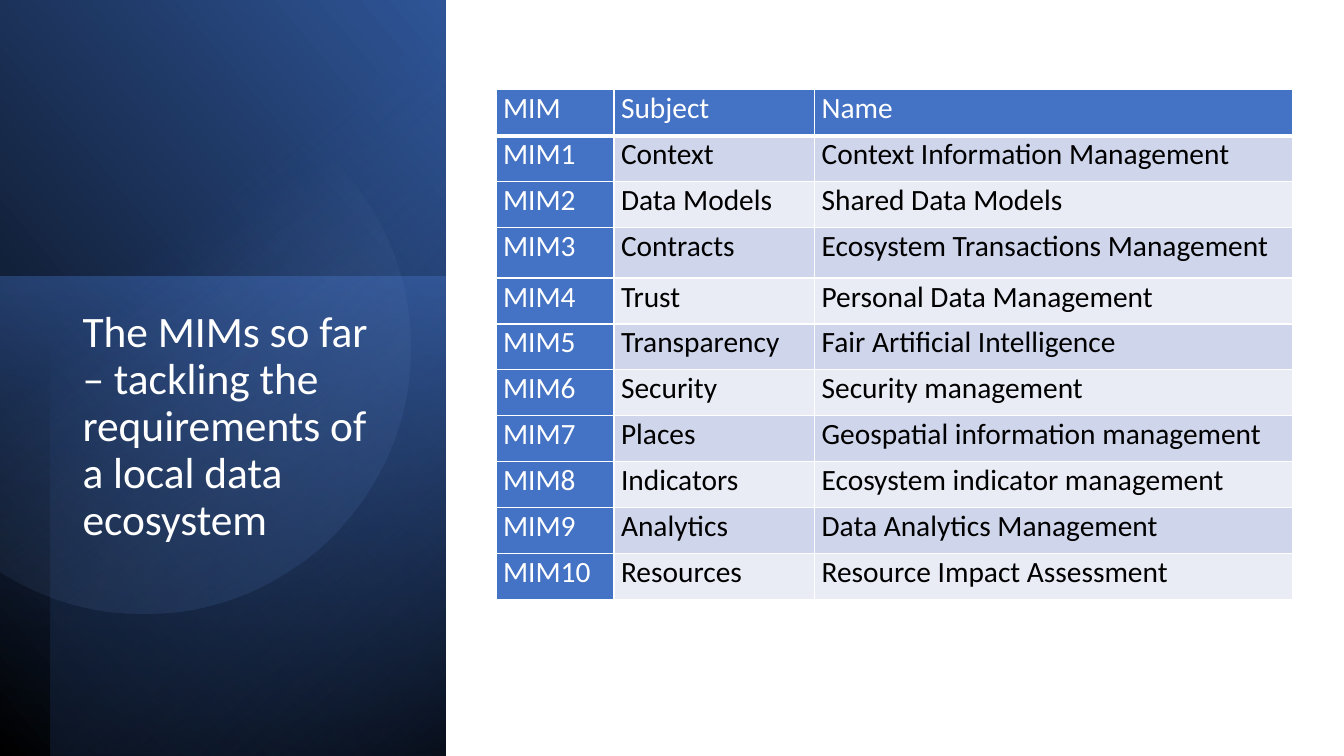
import math

import pptx
import pptx.dml.color
import pptx.enum.shapes
import pptx.oxml
import pptx.oxml.ns
import pptx.util

Inches = pptx.util.Inches
Pt = pptx.util.Pt

TITLE = "The MIMs so far – tackling the requirements of a local data ecosystem"
TABLE_ROWS = [
    ("MIM", "Subject", "Name"),
    ("MIM1", "Context", "Context Information Management"),
    ("MIM2", "Data Models", "Shared Data Models"),
    ("MIM3", "Contracts", "Ecosystem Transactions Management"),
    ("MIM4", "Trust", "Personal Data Management"),
    ("MIM5", "Transparency", "Fair Artificial Intelligence"),
    ("MIM6", "Security", "Security management"),
    ("MIM7", "Places", "Geospatial information management"),
    ("MIM8", "Indicators", "Ecosystem indicator management"),
    ("MIM9", "Analytics", "Data Analytics Management"),
    ("MIM10", "Resources", "Resource Impact Assessment"),
]

THEME = {
    "font": "Calibri", "title_size": 31, "table_size": 21,
    "white": "FFFFFF", "black": "000000", "accent": "4472C4",
    "deep": "2F5597", "navy": "203864", "pale": "8FAADC",
    "odd_row": "CFD5EA", "even_row": "E9EBF5",
}

# box, rotation, mirrored, gradient stops (position, colour, opacity), angle
PANELS = [
    ((-1.55, 1.55, 7.52, 4.42), 90, True,
     [(0, "black", 100), (100, "deep", 100)], 310),
    ((-0.17, 2.91, 4.76, 4.42), 270, False,
     [(0, "accent", 50), (100, "navy", 0)], 190),
    ((-1.29, 1.79, 7.5, 3.92), 270, True,
     [(0, "black", 59), (69, "accent", 0)], 220),
]
DISC_CENTRE, DISC_RADIUS = (1.43, 3.45), 2.64
DISC_STOPS, DISC_ANGLE = [(39, "pale", 0), (100, "deep", 26)], 52

TITLE_BOX = (0.72, 3.03, 3.15, 3.36)
TABLE_LEFT, TABLE_TOP, TABLE_HEIGHT = 4.92, 0.89, 5.06
COLUMN_WIDTHS = (1.17, 1.99, 4.74)
TALL_ROW, TALL_HEIGHT = 3, 0.5


def rgb(name):
    return pptx.dml.color.RGBColor.from_string(THEME[name])


def style_font(font, size, colour):
    font.name = THEME["font"]
    font.size = Pt(THEME[size])
    font.bold = False
    font.color.rgb = rgb(colour)


def fill_gradient(shape, stops, angle):
    """Replace the fill by a linear gradient with opacity; angle runs clockwise."""
    shape.shadow.inherit = False
    shape.line.fill.background()
    shape.fill.background()
    marks = "".join(
        f'<a:gs pos="{position * 1000}"><a:srgbClr val="{THEME[colour]}">'
        f'<a:alpha val="{opacity * 1000}"/></a:srgbClr></a:gs>'
        for position, colour, opacity in stops)
    gradient = pptx.oxml.parse_xml(
        f'<a:gradFill {pptx.oxml.ns.nsdecls("a")} rotWithShape="1">'
        f'<a:gsLst>{marks}</a:gsLst>'
        f'<a:lin ang="{angle * 60000}" scaled="0"/></a:gradFill>')
    properties = shape._element.spPr
    properties.replace(properties.find(pptx.oxml.ns.qn("a:noFill")), gradient)


def add_panels(page):
    for box, rotation, mirrored, stops, angle in PANELS:
        panel = page.shapes.add_shape(
            pptx.enum.shapes.MSO_SHAPE.RECTANGLE, *map(Inches, box))
        panel.rotation = rotation
        if mirrored:
            panel._element.spPr.xfrm.set("flipH", "1")
        fill_gradient(panel, stops, angle)


def add_disc(page):
    """Draw the circle, cut off by the left edge of the slide."""
    x, y = DISC_CENTRE
    limit = math.acos(-x / DISC_RADIUS)
    steps = 120
    turns = [limit * (2 * step / steps - 1) for step in range(steps + 1)]
    points = [(Inches(x + DISC_RADIUS * math.cos(turn)),
               Inches(y + DISC_RADIUS * math.sin(turn))) for turn in turns]
    builder = page.shapes.build_freeform(*points[0])
    builder.add_line_segments(points[1:], close=True)
    fill_gradient(builder.convert_to_shape(), DISC_STOPS, DISC_ANGLE)


def add_title(page):
    box = page.shapes.add_textbox(*map(Inches, TITLE_BOX))
    box.text_frame.word_wrap = True
    para = box.text_frame.paragraphs[0]
    para.text = TITLE
    para.line_spacing = 0.9
    style_font(para.font, "title_size", "white")


def add_borders(cell, is_header):
    properties = cell._tc.get_or_add_tcPr()
    for side in "LRTB":
        width = Pt(3 if is_header and side == "B" else 1)
        properties.append(pptx.oxml.parse_xml(
            f'<a:ln{side} {pptx.oxml.ns.nsdecls("a")} w="{width}"><a:solidFill>'
            f'<a:srgbClr val="{THEME["white"]}"/></a:solidFill></a:ln{side}>'))


def fill_cell(cell, text, row, column):
    is_heading = row == 0 or column == 0
    band = "odd_row" if row % 2 else "even_row"
    cell.margin_left = cell.margin_right = Inches(0.07)
    cell.margin_top, cell.margin_bottom = Inches(0.01), Inches(0.06)
    add_borders(cell, row == 0)
    cell.fill.solid()
    cell.fill.fore_color.rgb = rgb("accent" if is_heading else band)
    para = cell.text_frame.paragraphs[0]
    para.text = text
    para.space_after = Pt(6)
    style_font(para.font, "table_size", "white" if is_heading else "black")


def add_mim_table(page):
    table = page.shapes.add_table(
        len(TABLE_ROWS), len(COLUMN_WIDTHS), Inches(TABLE_LEFT), Inches(TABLE_TOP),
        Inches(sum(COLUMN_WIDTHS)), Inches(TABLE_HEIGHT)).table
    table.horz_banding = False
    for column, width in zip(table.columns, COLUMN_WIDTHS):
        column.width = Inches(width)
    row_height = (TABLE_HEIGHT - TALL_HEIGHT) / (len(TABLE_ROWS) - 1)
    for row, texts in enumerate(TABLE_ROWS):
        table.rows[row].height = Inches(TALL_HEIGHT if row == TALL_ROW else row_height)
        for column, text in enumerate(texts):
            fill_cell(table.cell(row, column), text, row, column)


def main():
    deck = pptx.Presentation()
    deck.slide_width, deck.slide_height = Inches(13.33), Inches(7.5)
    page = deck.slides.add_slide(deck.slide_layouts[6])
    add_panels(page)
    add_disc(page)
    add_title(page)
    add_mim_table(page)
    deck.save("out.pptx")


if __name__ == "__main__":
    main()
